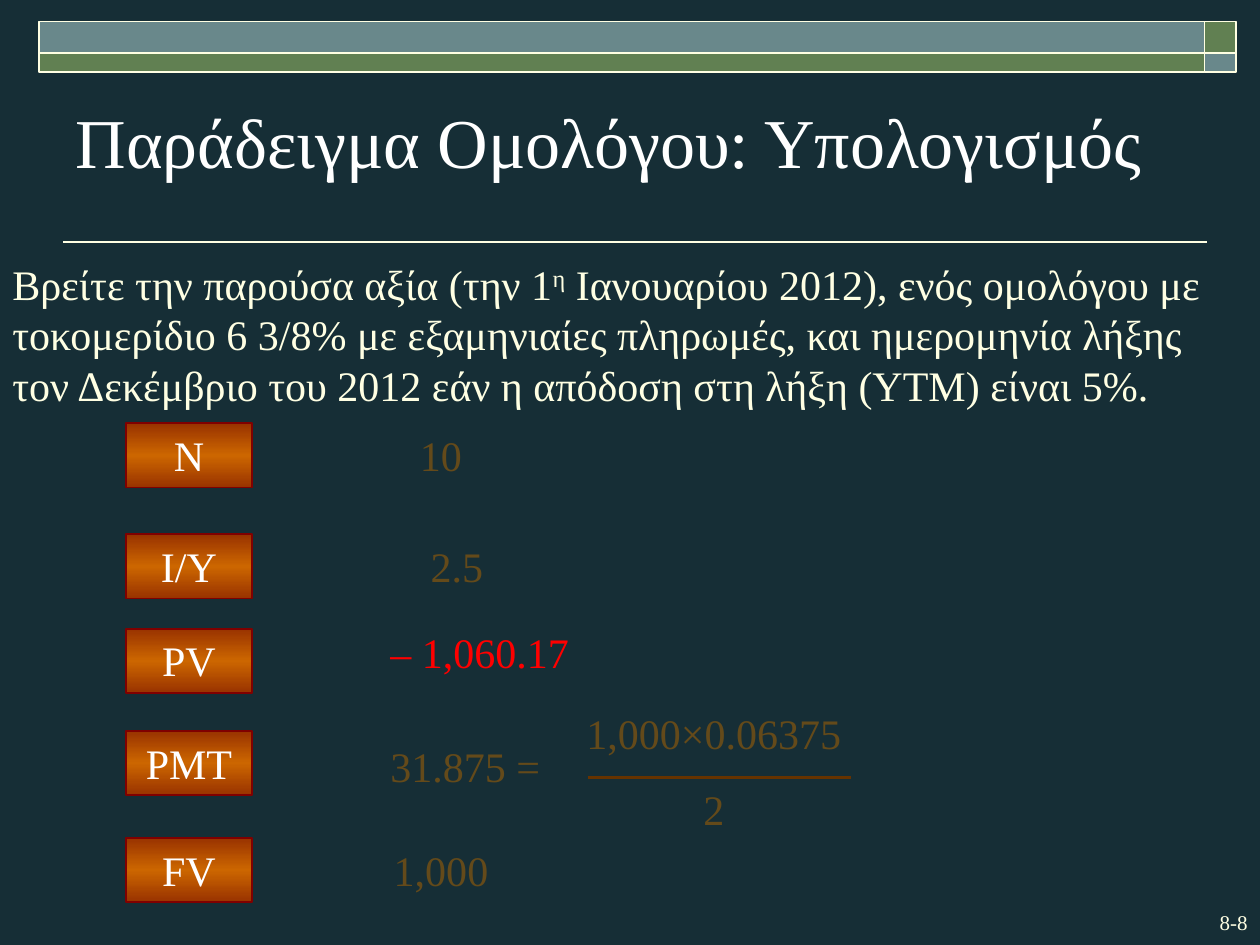
"""Build the bond valuation slide with its calculator keys and values."""
from copy import deepcopy
from dataclasses import dataclass
from typing import NamedTuple

from lxml.etree import SubElement
from pptx import Presentation
from pptx.dml.color import RGBColor
from pptx.enum.shapes import MSO_CONNECTOR, MSO_SHAPE
from pptx.enum.text import MSO_ANCHOR, PP_ALIGN
from pptx.oxml.ns import qn
from pptx.util import Inches, Pt


@dataclass(frozen=True)
class Theme:
    font: str = "Times New Roman"
    background: str = "162E36"
    cream: str = "FFFFE3"
    white: str = "FFFFFF"
    green: str = "618052"
    teal: str = "69888B"
    brown: str = "644A1A"
    red: str = "FF0000"
    fraction_bar: str = "663300"
    key_edge: str = "993300"
    key_middle: str = "CC6600"
    key_border: str = "800000"
    title_size: int = 40
    body_size: int = 24
    number_size: int = 12


class Box(NamedTuple):
    column: float
    row: float
    columns: float
    rows: float


class Key(NamedTuple):
    label: str
    row: float


class Value(NamedTuple):
    text: str
    box: Box
    align: PP_ALIGN = PP_ALIGN.CENTER
    color: str = Theme.brown


THEME = Theme()
COLUMNS, ROWS = 10, 7.5
WIDTH, HEIGHT = Inches(10), Inches(7.5)
KEY_COLUMN, KEY_WIDTH, KEY_HEIGHT = 1, 1, 0.51
VALUE_COLUMN, VALUE_HEIGHT = 3, 0.5
BAND_COLUMNS = ((0.31, 9.25), (9.56, 0.25))
BAND_ROWS = ((0.17, 0.25), (0.42, 0.15))

KEYS = (Key("N", 3.36), Key("I/Y", 4.24), Key("PV", 4.99), Key("PMT", 5.8), Key("FV", 6.65))
VALUES = (
    Value("10", Box(VALUE_COLUMN, 3.36, 1, VALUE_HEIGHT)),
    Value("2.5", Box(VALUE_COLUMN, 4.24, 1.25, VALUE_HEIGHT)),
    Value("– 1,060.17", Box(VALUE_COLUMN, 4.92, 2.75, VALUE_HEIGHT), PP_ALIGN.LEFT, THEME.red),
    Value("31.875 =", Box(VALUE_COLUMN, 5.83, 2.25, VALUE_HEIGHT), PP_ALIGN.LEFT),
    Value("1,000", Box(VALUE_COLUMN, 6.65, 1, VALUE_HEIGHT)),
    Value("1,000×0.06375", Box(4.5, 5.57, 2.33, VALUE_HEIGHT)),
    Value("2", Box(4.75, 6.17, 1.83, VALUE_HEIGHT)),
)
QUESTION = (
    "Βρείτε την παρούσα αξία (την 1",
    "η",
    " Ιανουαρίου 2012), ενός ομολόγου με τοκομερίδιο 6 3/8% με εξαμηνιαίες πληρωμές, "
    "και ημερομηνία λήξης τον Δεκέμβριο του 2012 εάν η απόδοση στη λήξη (YTM) είναι 5%.",
)


def across(column: float) -> int:
    """Convert grid columns to a length."""
    return round(WIDTH * column / COLUMNS)


def down(row: float) -> int:
    """Convert grid rows to a length."""
    return round(HEIGHT * row / ROWS)


def place(box: Box) -> tuple[int, int, int, int]:
    """Convert a grid box to left, top, width and height."""
    return across(box.column), down(box.row), across(box.columns), down(box.rows)


def format_text(text_frame, size: int, color: str, align: PP_ALIGN) -> None:
    """Give every run the theme font, a size and a colour."""
    text_frame.word_wrap = True
    for paragraph in text_frame.paragraphs:
        paragraph.alignment = align
        for run in paragraph.runs:
            run.font.name = THEME.font
            run.font.size = Pt(size)
            run.font.color.rgb = RGBColor.from_string(color)


def add_text(slide, text: str, box: Box, size: int, color: str, align: PP_ALIGN):
    """Add a formatted text box."""
    shape = slide.shapes.add_textbox(*place(box))
    shape.text_frame.text = text
    format_text(shape.text_frame, size, color, align)
    return shape


def add_rectangle(slide, box: Box, line: str):
    """Add a rectangle with a thin outline and no shadow."""
    shape = slide.shapes.add_shape(MSO_SHAPE.RECTANGLE, *place(box))
    shape.shadow.inherit = False
    shape.line.color.rgb = RGBColor.from_string(line)
    shape.line.width = Pt(1)
    return shape


def add_rule(slide, start: float, end: float, row: float, color: str, weight: float) -> None:
    """Add a horizontal line between two columns."""
    line = slide.shapes.add_connector(
        MSO_CONNECTOR.STRAIGHT, across(start), down(row), across(end), down(row)
    )
    line.line.color.rgb = RGBColor.from_string(color)
    line.line.width = Pt(weight)
    SubElement(line._element.spPr, qn("a:effectLst"))


def add_banner(slide) -> None:
    """Add the two-by-two band with alternating colours."""
    for row_index, (row, rows) in enumerate(BAND_ROWS):
        for column_index, (column, columns) in enumerate(BAND_COLUMNS):
            shape = add_rectangle(slide, Box(column, row, columns, rows), THEME.cream)
            color = (THEME.teal, THEME.green)[(row_index + column_index) % 2]
            shape.fill.solid()
            shape.fill.fore_color.rgb = RGBColor.from_string(color)


def add_key(slide, key: Key) -> None:
    """Add a calculator key with a three-stop gradient."""
    box = Box(KEY_COLUMN, key.row, KEY_WIDTH, KEY_HEIGHT)
    shape = add_rectangle(slide, box, THEME.key_border)
    shape.fill.gradient()
    shape.fill.gradient_angle = 90
    stop_list = shape._element.spPr.find(".//" + qn("a:gsLst"))
    stop_list.append(deepcopy(stop_list[-1]))
    colors = (THEME.key_edge, THEME.key_middle, THEME.key_edge)
    for index, (stop, color) in enumerate(zip(shape.fill.gradient_stops, colors)):
        stop.position = index / 2
        stop.color.rgb = RGBColor.from_string(color)
    shape.text_frame.text = key.label
    shape.text_frame.vertical_anchor = MSO_ANCHOR.TOP
    format_text(shape.text_frame, THEME.body_size, THEME.white, PP_ALIGN.CENTER)


def add_question(slide) -> None:
    """Add the question with its superscript ordinal."""
    start, ordinal, rest = QUESTION
    shape = add_text(
        slide, start, Box(0, 2, 10, 1.31), THEME.body_size, THEME.cream, PP_ALIGN.LEFT
    )
    paragraph = shape.text_frame.paragraphs[0]
    superscript = paragraph.add_run()
    superscript.text = ordinal
    superscript.font._element.set("baseline", "30000")
    paragraph.add_run().text = rest
    format_text(shape.text_frame, THEME.body_size, THEME.cream, PP_ALIGN.LEFT)


def set_title(slide, text: str) -> None:
    """Move and format the title placeholder."""
    title = slide.shapes.title
    title.left, title.top, title.width, title.height = place(Box(0.5, 0.58, 9, 0.92))
    title.text_frame.text = text
    title.text_frame.vertical_anchor = MSO_ANCHOR.BOTTOM
    format_text(title.text_frame, THEME.title_size, THEME.white, PP_ALIGN.LEFT)


def main() -> None:
    """Build and save the presentation."""
    presentation = Presentation()
    presentation.slide_width, presentation.slide_height = WIDTH, HEIGHT
    slide = presentation.slides.add_slide(presentation.slide_layouts[5])
    slide.background.fill.solid()
    slide.background.fill.fore_color.rgb = RGBColor.from_string(THEME.background)
    add_rule(slide, 0.5, 9.58, 1.92, THEME.cream, 1)
    add_banner(slide)
    number_box = Box(9.17, 7.17, 0.83, 0.3)
    add_text(slide, "8-8", number_box, THEME.number_size, THEME.cream, PP_ALIGN.RIGHT)
    set_title(slide, "Παράδειγμα Ομολόγου: Υπολογισμός")
    for key in KEYS:
        add_key(slide, key)
    for value in VALUES:
        add_text(slide, value.text, value.box, THEME.body_size, value.color, value.align)
    add_rule(slide, 4.67, 6.75, 6.17, THEME.fraction_bar, 1.5)
    add_question(slide)
    presentation.save("out.pptx")


if __name__ == "__main__":
    main()
